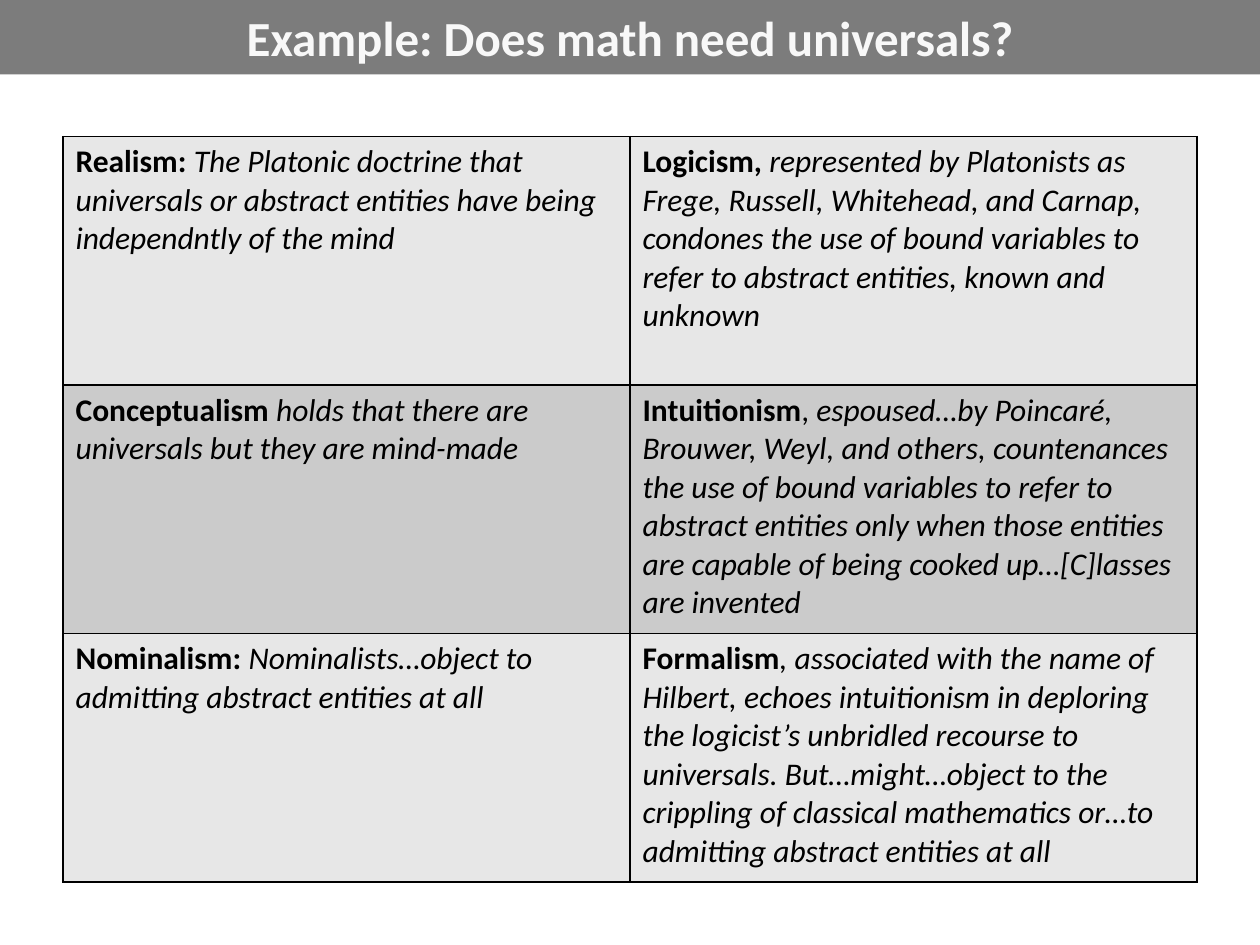
"""Build a slide that sets views on universals beside views on mathematics."""
from lxml.etree import SubElement
from pptx import Presentation
from pptx.dml.color import RGBColor
from pptx.enum.shapes import MSO_SHAPE as Shape
from pptx.enum.text import MSO_ANCHOR as Anchor, PP_ALIGN as Align
from pptx.oxml.ns import qn
from pptx.util import Pt

TITLE = "Example: Does math need universals?"
FONT = "Calibri"
BOLD, ITALIC, PLAIN = "bold", "italic", "plain"
ROWS = [
    (
        [("Realism: ", BOLD),
         ("The Platonic doctrine that universals or abstract entities have being "
          "independntly of the mind", ITALIC)],
        [("Logicism, ", BOLD),
         ("represented by Platonists as Frege, Russell, Whitehead, and Carnap, condones "
          "the use of bound variables to refer to abstract entities, known and unknown", ITALIC)],
    ),
    (
        [("Conceptualism ", BOLD),
         ("holds that there are universals but they are mind-made", ITALIC)],
        [("Intuitionism", BOLD), (", ", PLAIN),
         ("espoused…by Poincaré, Brouwer, Weyl, and others, countenances the use of bound "
          "variables to refer to abstract entities only when those entities are capable of "
          "being cooked up…[C]lasses are invented", ITALIC)],
    ),
    (
        [("Nominalism: ", BOLD),
         ("Nominalists…object to admitting abstract entities at all", ITALIC)],
        [("Formalism", BOLD),
         (", associated with the name of Hilbert, echoes intuitionism in deploring the "
          "logicist’s unbridled recourse to universals. But…might…object to the crippling of "
          "classical mathematics or…to admitting abstract entities at all", ITALIC)],
    ),
]
BAND_FILLS = ["E7E7E7", "CBCBCB"]
SLIDE_WIDTH, SLIDE_HEIGHT = 720, 540
TITLE_HEIGHT = 42.5
TABLE_LEFT, TABLE_TOP = 36, 78
COLUMN_WIDTH, ROW_HEIGHT = 324, 142


def paint(fill, color):
    fill.solid()
    fill.fore_color.rgb = RGBColor.from_string(color)


def add_run(paragraph, text, size, color, style):
    run = paragraph.add_run()
    run.text = text
    run.font.name = FONT
    run.font.size = Pt(size)
    run.font.bold = style == BOLD
    run.font.italic = style == ITALIC
    paint(run.font.fill, color)


def add_borders(cell, color, width):
    properties = cell._tc.get_or_add_tcPr()
    for index, side in enumerate(("a:lnL", "a:lnR", "a:lnT", "a:lnB")):
        line = properties.makeelement(qn(side), {"w": str(Pt(width))})
        SubElement(SubElement(line, qn("a:solidFill")), qn("a:srgbClr"), val=color)
        properties.insert(index, line)


def add_title(slide):
    shape = slide.shapes.add_shape(Shape.RECTANGLE, 0, 0, Pt(SLIDE_WIDTH), Pt(TITLE_HEIGHT))
    shape.shadow.inherit = False
    paint(shape.fill, "7C7C7C")
    shape.line.fill.background()
    frame = shape.text_frame
    frame.word_wrap = True
    frame.vertical_anchor = Anchor.MIDDLE
    paragraph = frame.paragraphs[0]
    paragraph.alignment = Align.CENTER
    add_run(paragraph, TITLE, 28, "F8F8F8", BOLD)


def add_views_table(slide):
    columns = len(ROWS[0])
    table = slide.shapes.add_table(
        len(ROWS), columns, Pt(TABLE_LEFT), Pt(TABLE_TOP),
        Pt(columns * COLUMN_WIDTH), Pt(len(ROWS) * ROW_HEIGHT)).table
    table.first_row = False
    for row_index, row in enumerate(ROWS):
        for column_index, runs in enumerate(row):
            cell = table.cell(row_index, column_index)
            paint(cell.fill, BAND_FILLS[row_index % len(BAND_FILLS)])
            add_borders(cell, "000000", 1)
            for text, style in runs:
                add_run(cell.text_frame.paragraphs[0], text, 18, "000000", style)


def main():
    presentation = Presentation()
    presentation.slide_width = Pt(SLIDE_WIDTH)
    presentation.slide_height = Pt(SLIDE_HEIGHT)
    slide = presentation.slides.add_slide(presentation.slide_layouts[6])
    add_title(slide)
    add_views_table(slide)
    presentation.save("out.pptx")


if __name__ == "__main__":
    main()
